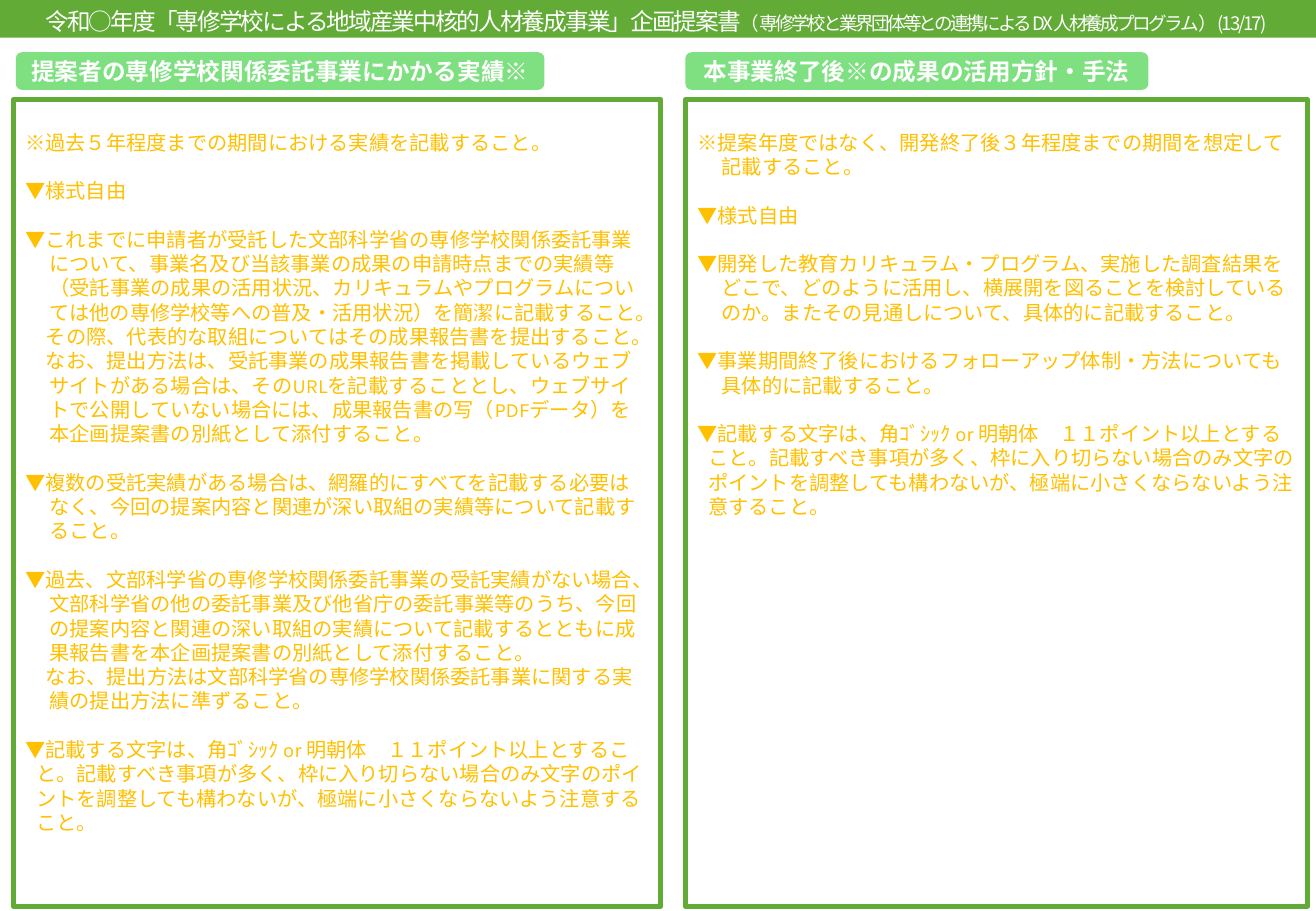
from dataclasses import dataclass

from lxml.etree import SubElement
from pptx import Presentation
from pptx.dml.color import RGBColor
from pptx.enum.shapes import MSO_SHAPE
from pptx.enum.text import MSO_ANCHOR, MSO_AUTO_SIZE, PP_ALIGN
from pptx.oxml.ns import qn
from pptx.util import Inches, Pt


@dataclass(frozen=True)
class Theme:
    green: RGBColor = RGBColor.from_string("62AB37")
    light_green: RGBColor = RGBColor.from_string("7EE081")
    amber: RGBColor = RGBColor.from_string("FFC000")
    white: RGBColor = RGBColor.from_string("FFFFFF")
    body_font: str = "Karla"
    title_font: str = "Noto Sans CJK JP"
    title_size: Pt = Pt(14)
    subtitle_size: Pt = Pt(11)
    body_size: Pt = Pt(12)
    line_gap: Pt = Pt(14.4)
    frame_width: Pt = Pt(3)


THEME = Theme()

FLUSH = (0, 0)
HANGING = (0.2, -0.2)
CONTINUED = (0.2, -0.03)
NARROW = (0.09, -0.09)

FONT_RULE = [
    ("▼記載する文字は、角ｺﾞｼｯｸ or 明朝体　１１ポイント以上とすること。", THEME.body_font),
    ("記載すべき事項", THEME.title_font),
    ("が多く、枠に入り切らない場合のみ文字のポイントを調整しても構わないが、"
     "極端に小さくならないよう注意すること。", THEME.body_font),
]

TITLE = [
    ("令和○年度「専修学校による地域産業中核的人材養成事業」企画提案書", THEME.title_size, -120),
    ("（", THEME.subtitle_size, -120),
    ("専修学校と業界団体等との連携によるDX人材養成プログラム", THEME.subtitle_size, -160),
    ("）(13/17)", THEME.subtitle_size, -120),
]

RECORD = [
    ("※過去５年程度までの期間における実績を記載すること。", FLUSH),
    ("▼様式自由", FLUSH),
    ("▼これまでに申請者が受託した文部科学省の専修学校関係委託事業について、"
     "事業名及び当該事業の成果の申請時点までの実績等（受託事業の成果の活用状況、"
     "カリキュラムやプログラムについては他の専修学校等への普及・活用状況）を"
     "簡潔に記載すること。", HANGING),
    ("その際、代表的な取組についてはその成果報告書を提出すること。", CONTINUED),
    ("なお、提出方法は、受託事業の成果報告書を掲載しているウェブサイトがある場合は、"
     "そのURLを記載することとし、ウェブサイトで公開していない場合には、"
     "成果報告書の写（PDFデータ）を本企画提案書の別紙として添付すること。", CONTINUED),
    ("▼複数の受託実績がある場合は、網羅的にすべてを記載する必要はなく、"
     "今回の提案内容と関連が深い取組の実績等について記載すること。", HANGING),
    ("▼過去、文部科学省の専修学校関係委託事業の受託実績がない場合、"
     "文部科学省の他の委託事業及び他省庁の委託事業等のうち、"
     "今回の提案内容と関連の深い取組の実績について記載するとともに"
     "成果報告書を本企画提案書の別紙として添付すること。", HANGING),
    ("なお、提出方法は文部科学省の専修学校関係委託事業に関する実績の"
     "提出方法に準ずること。", CONTINUED),
]

POLICY = [
    ("※提案年度ではなく、開発終了後３年程度までの期間を想定して記載すること。", HANGING),
    ("▼様式自由", FLUSH),
    ("▼開発した教育カリキュラム・プログラム、実施した調査結果をどこで、"
     "どのように活用し、横展開を図ることを検討しているのか。"
     "またその見通しについて、具体的に記載すること。", HANGING),
    ("▼事業期間終了後におけるフォローアップ体制・方法についても"
     "具体的に記載すること。", HANGING),
]


def add_box(page, preset, left, top, width, height, fill=None, line=None):
    box = page.shapes.add_shape(
        preset, Inches(left), Inches(top), Inches(width), Inches(height))
    box.shadow.inherit = False
    if fill is None:
        box.fill.background()
    else:
        box.fill.solid()
        box.fill.fore_color.rgb = fill
    if line is None:
        box.line.fill.background()
    else:
        box.line.color.rgb = line
        box.line.width = THEME.frame_width
    return box


def add_span(para, text, size, color, latin, east_asian, bold=False, spacing=None):
    span = para.add_run()
    span.text = text
    span.font.size = size
    span.font.bold = bold
    span.font.color.rgb = color
    span.font.name = latin
    properties = span.font._element
    SubElement(properties, qn("a:ea")).set("typeface", east_asian)
    if spacing is not None:
        properties.set("spc", str(spacing))


def add_heading(page, text, left, width):
    box = add_box(page, MSO_SHAPE.ROUNDED_RECTANGLE, left, 0.43, width, 0.31,
                  fill=THEME.light_green)
    box.text_frame.vertical_anchor = MSO_ANCHOR.MIDDLE
    para = box.text_frame.paragraphs[0]
    para.alignment = PP_ALIGN.CENTER
    add_span(para, text, THEME.title_size, THEME.white,
             THEME.body_font, THEME.body_font, bold=True)


def add_panel(page, left, width, notes):
    box = add_box(page, MSO_SHAPE.RECTANGLE, left, 0.82, width, 6.64, line=THEME.green)
    frame = box.text_frame
    frame.word_wrap = True
    frame.vertical_anchor = MSO_ANCHOR.TOP
    frame.margin_top = Inches(0.25)
    entries = [([(text, THEME.body_font)], indent) for text, indent in notes]
    entries.append((FONT_RULE, NARROW))
    for index, (spans, (margin, first_line)) in enumerate(entries):
        para = frame.add_paragraph() if index else frame.paragraphs[0]
        para.alignment = PP_ALIGN.LEFT
        if index and (margin, first_line) != CONTINUED:
            para.space_before = THEME.line_gap
        properties = para._p.get_or_add_pPr()
        properties.set("marL", str(Inches(margin)))
        properties.set("indent", str(Inches(first_line)))
        for text, latin in spans:
            add_span(para, text, THEME.body_size, THEME.amber, latin, THEME.body_font)


def add_title(page):
    add_box(page, MSO_SHAPE.RECTANGLE, 0, 0, 10.83, 0.31, fill=THEME.green)
    box = page.shapes.add_textbox(Inches(0), Inches(0.01), Inches(10.8), Inches(0.34))
    box.text_frame.word_wrap = True
    box.text_frame.auto_size = MSO_AUTO_SIZE.SHAPE_TO_FIT_TEXT
    para = box.text_frame.paragraphs[0]
    para.alignment = PP_ALIGN.CENTER
    for text, size, spacing in TITLE:
        add_span(para, text, size, THEME.white,
                 THEME.title_font, THEME.title_font, spacing=spacing)


def main():
    deck = Presentation()
    deck.slide_width = Inches(10.83)
    deck.slide_height = Inches(7.5)
    page = deck.slides.add_slide(deck.slide_layouts[6])
    add_heading(page, "本事業終了後※の成果の活用方針・手法", 5.64, 3.81)
    add_heading(page, "提案者の専修学校関係委託事業にかかる実績※", 0.13, 4.35)
    add_panel(page, 0.11, 5.33, RECORD)
    add_panel(page, 5.64, 5.12, POLICY)
    add_title(page)
    deck.save("out.pptx")


if __name__ == "__main__":
    main()
